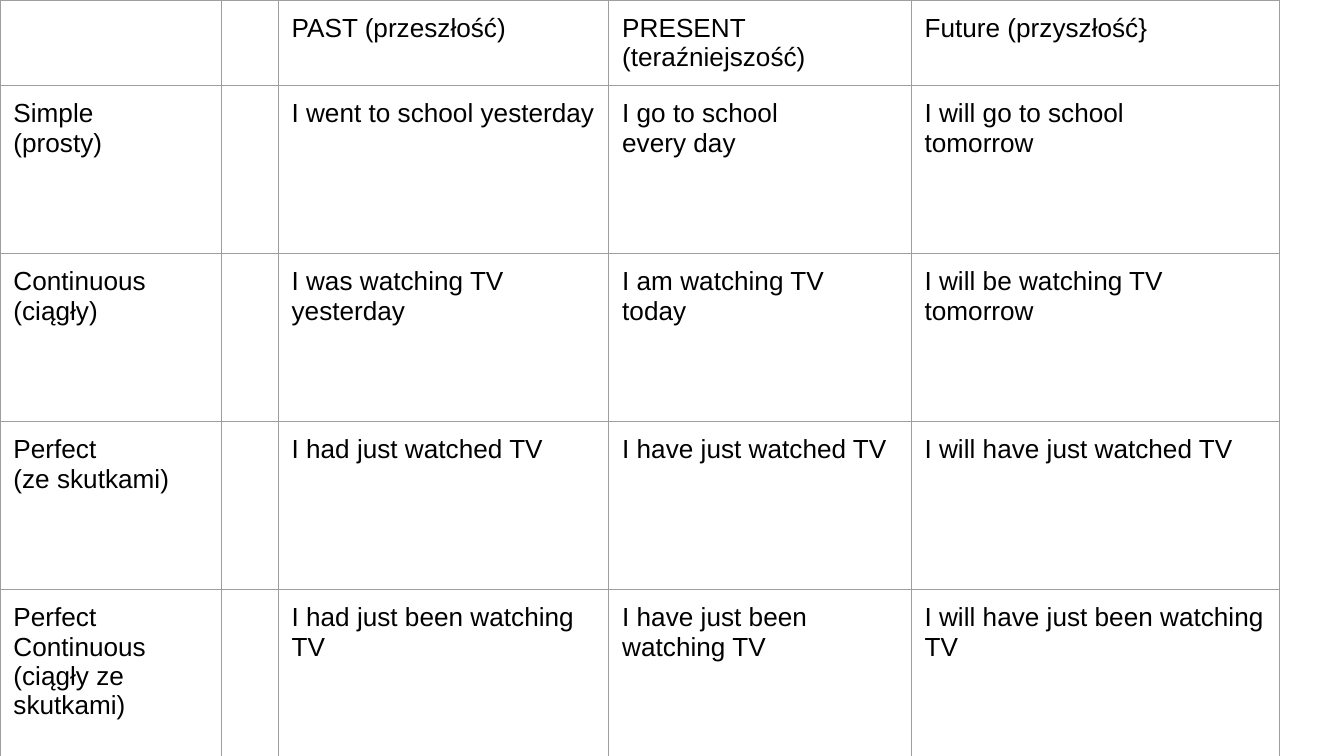
from pptx import Presentation
from pptx.dml.color import RGBColor
from pptx.oxml.ns import qn
from pptx.util import Inches, Pt
from lxml.etree import SubElement

BLACK = RGBColor(0x00, 0x00, 0x00)
GREY = RGBColor(0x9E, 0x9E, 0x9E)

SLIDE_WIDTH = Inches(10)
SLIDE_HEIGHT = SLIDE_WIDTH * 9 // 16
COLUMN_WIDTHS = [1.65, 0.42, 2.46, 2.25, 2.74]
HEADER_HEIGHT, TENSE_HEIGHT = 0.62, 1.25
CELL_MARGIN = Inches(0.1)

TENSES = [
    ["", "", "PAST (przeszłość)", "PRESENT (teraźniejszość)", "Future (przyszłość}"],
    ["Simple\n(prosty)", "", "I went to school yesterday",
     "I go to school\nevery day", "I will go to school\ntomorrow"],
    ["Continuous\n(ciągły)", "", "I was watching TV\nyesterday",
     "I am watching TV\ntoday", "I will be watching TV\ntomorrow"],
    ["Perfect\n(ze skutkami)", "", "I had just watched TV",
     "I have just watched TV", "I will have just watched TV"],
    ["Perfect Continuous\n(ciągły ze skutkami)", "", "I had just been watching TV",
     "I have just been watching TV", "I will have just been watching TV"],
]


def add_borders(cell, color, width):
    tc_pr = cell._tc.get_or_add_tcPr()
    for side in ("a:lnL", "a:lnR", "a:lnT", "a:lnB"):
        ln = SubElement(tc_pr, qn(side), w=str(width))
        fill = SubElement(ln, qn("a:solidFill"))
        SubElement(fill, qn("a:srgbClr"), val=str(color))


def fill_cell(cell, text):
    add_borders(cell, GREY, Pt(0.75))
    cell.fill.background()
    cell.margin_left = cell.margin_right = CELL_MARGIN
    cell.margin_top = cell.margin_bottom = CELL_MARGIN
    cell.text = text
    for p in cell.text_frame.paragraphs:
        p.font.name = "Arial"
        p.font.size = Pt(14)
        p.font.bold = False
        p.font.color.rgb = BLACK


def add_tense_table(s):
    heights = [HEADER_HEIGHT] + [TENSE_HEIGHT] * (len(TENSES) - 1)
    table = s.shapes.add_table(
        len(heights), len(COLUMN_WIDTHS), 0, 0,
        Inches(sum(COLUMN_WIDTHS)), Inches(sum(heights))).table
    table.first_row = table.horz_banding = False
    for column, width in zip(table.columns, COLUMN_WIDTHS):
        column.width = Inches(width)
    for row, height, texts in zip(table.rows, heights, TENSES):
        row.height = Inches(height)
        for cell, text in zip(row.cells, texts):
            fill_cell(cell, text)


def main():
    prs = Presentation()
    prs.slide_width, prs.slide_height = SLIDE_WIDTH, SLIDE_HEIGHT
    s = prs.slides.add_slide(prs.slide_layouts[6])
    add_tense_table(s)
    prs.save("out.pptx")


if __name__ == "__main__":
    main()
